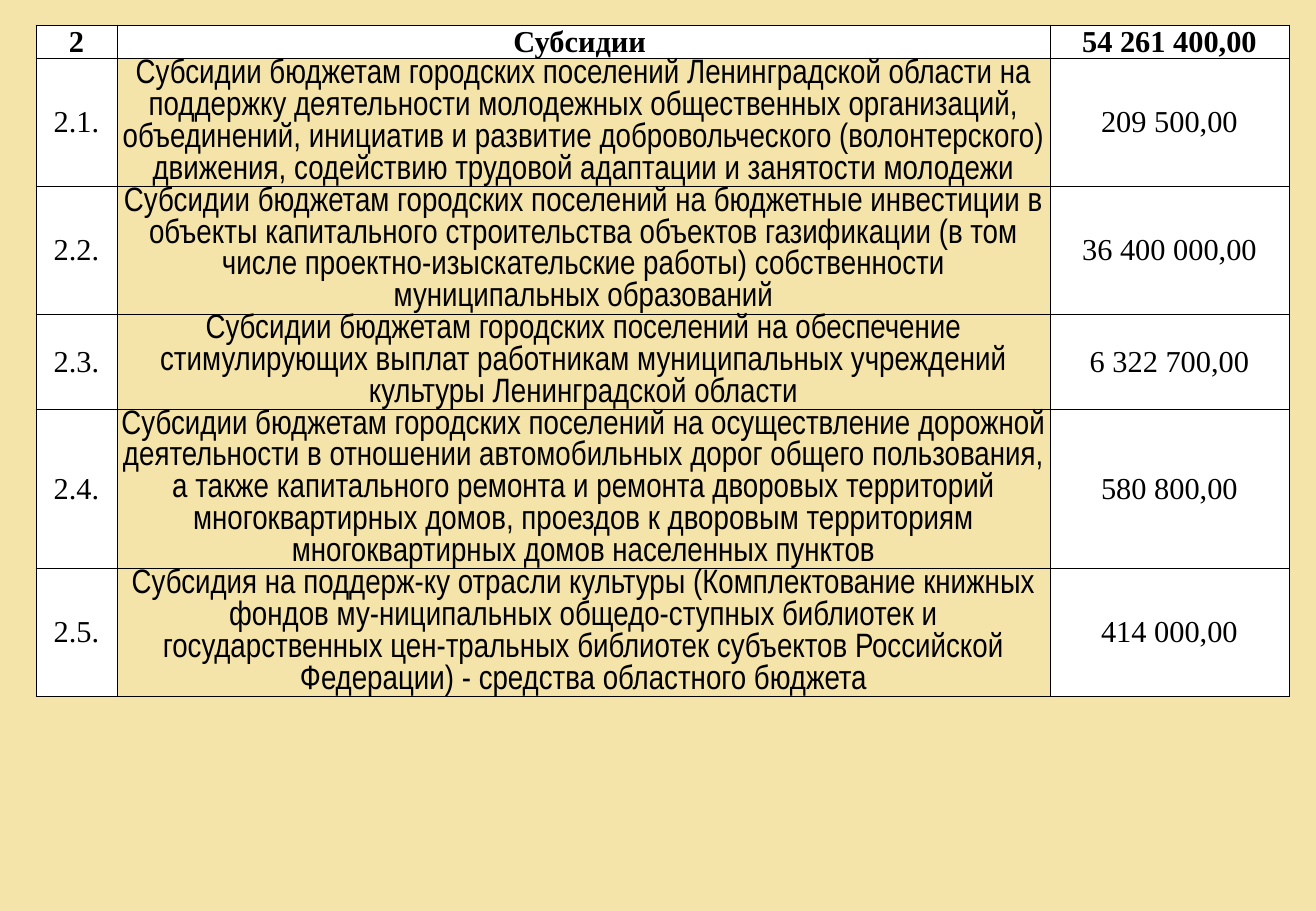
from lxml.etree import SubElement
from pptx import Presentation
from pptx.dml.color import RGBColor
from pptx.enum.text import MSO_ANCHOR, PP_ALIGN
from pptx.oxml.ns import qn
from pptx.util import Emu, Pt

EMU_PER_PX = 7526
BORDER_WIDTH = Pt(0.5)
COLUMN_WIDTHS = [81, 933, 239]
SERIF = {"name": "Times New Roman", "size": Pt(18), "bold": False}
SERIF_BOLD = SERIF | {"bold": True}
NARROW = {"name": "Arial Narrow", "size": Pt(20), "bold": False}
CELL_FORMAT = {
    "margin_left": 0,
    "margin_top": 0,
    "margin_right": 0,
    "margin_bottom": 0,
    "vertical_anchor": MSO_ANCHOR.MIDDLE,
}

SUBSIDIES = [
    (33, "2", "Субcидии ", "54 261 400,00"),
    (128, "2.1.", "Субсидии бюджетам городских поселений Ленинградской области на "
     "поддержку деятельности молодежных общественных организаций, объединений, "
     "инициатив и развитие добровольческого (волонтерского) движения, "
     "содействию трудовой адаптации и занятости молодежи", "209 500,00"),
    (127, "2.2.", "Субсидии бюджетам городских поселений на бюджетные инвестиции в "
     "объекты капитального строительства объектов газификации (в том числе "
     "проектно-изыскательские работы) собственности муниципальных образований",
     "36 400 000,00"),
    (95, "2.3.", "Субсидии бюджетам городских поселений на обеспечение "
     "стимулирующих выплат работникам муниципальных учреждений культуры "
     "Ленинградской области", "6 322 700,00"),
    (159, "2.4.", "Субсидии бюджетам городских поселений на осуществление дорожной "
     "деятельности в отношении автомобильных дорог общего пользования, а также "
     "капитального ремонта и ремонта дворовых территорий многоквартирных домов, "
     "проездов к дворовым территориям многоквартирных домов населенных пунктов",
     "580 800,00"),
    (128, "2.5.", "Субсидия на поддерж-ку отрасли культуры (Комплектование книжных "
     "фондов му-ниципальных общедо-ступных библиотек и государственных "
     "цен-тральных библиотек субъектов Российской Федерации) - средства "
     "областного бюджета", "414 000,00"),
]


def px(length):
    """Turn a length in px into EMU."""
    return Emu(length * EMU_PER_PX)


def color(hex_string):
    """Turn a hex string into a colour."""
    return RGBColor.from_string(hex_string)


def set_attributes(target, values):
    """Set every attribute listed in a dict of format values."""
    for name, value in values.items():
        setattr(target, name, value)


def add_borders(cell, hex_string):
    """Draw a thin line on all four sides of a cell."""
    properties = cell._tc.get_or_add_tcPr()
    for side in ("lnL", "lnR", "lnT", "lnB"):
        line = SubElement(properties, qn(f"a:{side}"), w=str(BORDER_WIDTH))
        fill = SubElement(line, qn("a:solidFill"))
        SubElement(fill, qn("a:srgbClr"), val=hex_string)


def write_cell(cell, text, font_format, fill):
    """Write centred text into a cell with borders and an optional fill."""
    set_attributes(cell, CELL_FORMAT)
    add_borders(cell, "000000")
    if fill:
        cell.fill.solid()
        cell.fill.fore_color.rgb = color(fill)
    else:
        cell.fill.background()
    paragraph = cell.text_frame.paragraphs[0]
    paragraph.alignment = PP_ALIGN.CENTER
    run = paragraph.add_run()
    run.text = text
    set_attributes(run.font, font_format)
    run.font.color.rgb = color("000000")


def add_subsidy_table(slide, left, top, width, height):
    """Place the table of subsidies in the given box."""
    frame = slide.shapes.add_table(
        len(SUBSIDIES), len(COLUMN_WIDTHS), px(left), px(top), px(width), px(height)
    )
    table = frame.table
    set_attributes(table, {"first_row": False, "horz_banding": False})
    for column, column_width in zip(table.columns, COLUMN_WIDTHS):
        column.width = px(column_width)
    for row_index, (row_height, *texts) in enumerate(SUBSIDIES):
        table.rows[row_index].height = px(row_height)
        for column_index, text in enumerate(texts):
            is_description = row_index > 0 and column_index == 1
            font_format = NARROW if is_description else SERIF
            if row_index == 0:
                font_format = SERIF_BOLD
            fill = None if is_description else "FFFFFF"
            write_cell(table.cell(row_index, column_index), text, font_format, fill)


def main():
    """Build the slide and save the presentation."""
    presentation = Presentation()
    set_attributes(presentation, {"slide_width": px(1316), "slide_height": px(911)})
    slide = presentation.slides.add_slide(presentation.slide_layouts[6])
    slide.background.fill.solid()
    slide.background.fill.fore_color.rgb = color("F5E4A9")
    table_height = sum(row[0] for row in SUBSIDIES)
    add_subsidy_table(slide, 36, 25, sum(COLUMN_WIDTHS), table_height)
    presentation.save("out.pptx")


if __name__ == "__main__":
    main()
